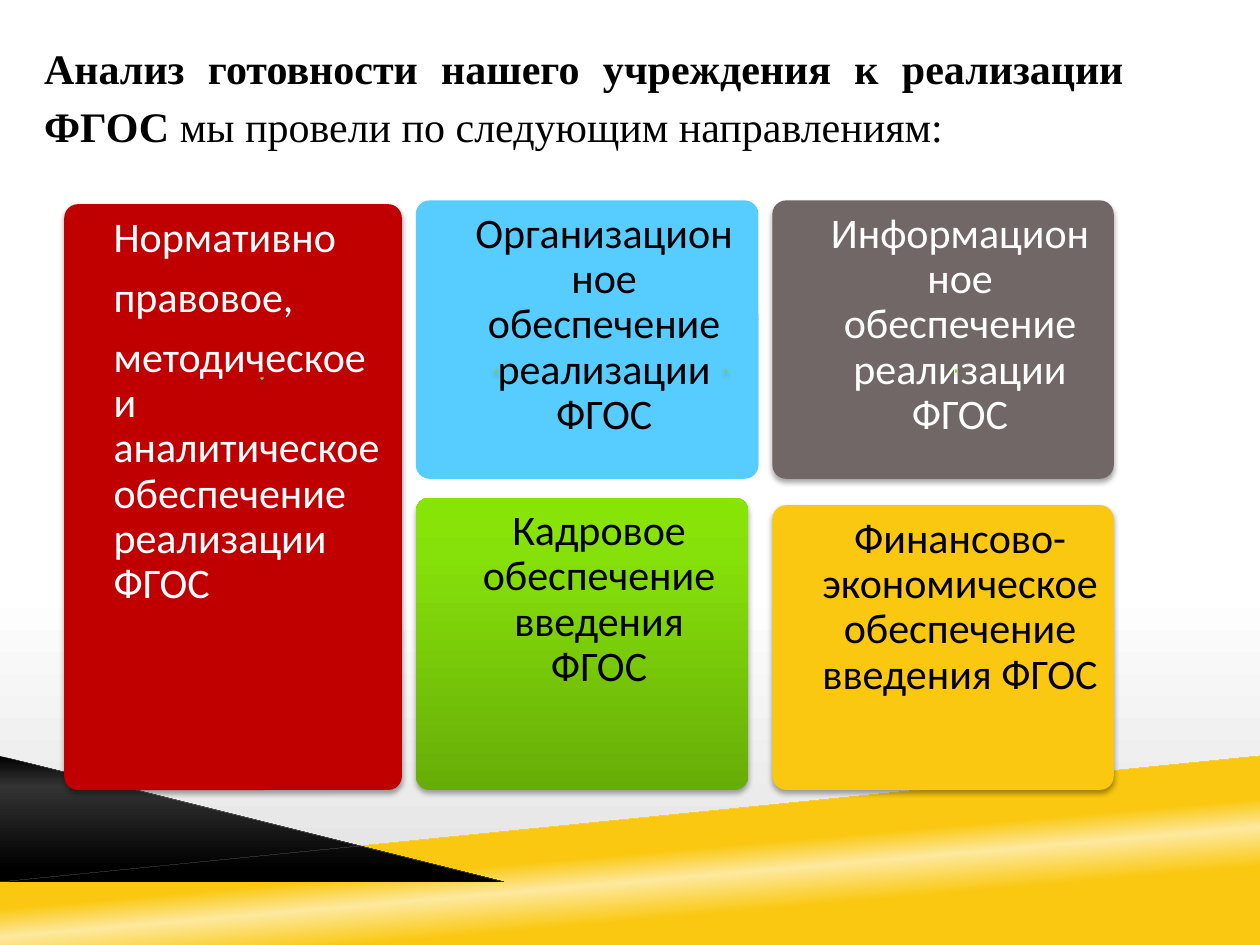
import lxml.etree
import pptx
import pptx.dml.color
import pptx.enum.shapes
import pptx.enum.text
import pptx.oxml.ns
import pptx.util

Inches = pptx.util.Inches
Pt = pptx.util.Pt
ALIGN = pptx.enum.text.PP_ALIGN
SHAPE = pptx.enum.shapes.MSO_SHAPE
qn = pptx.oxml.ns.qn

COLORS = {
    "white": "FFFFFF",
    "black": "000000",
    "mist": "E6E6E6",
    "charcoal": "333333",
    "yellow": "FAC810",
    "pale_yellow": "FDE99F",
    "red": "C00000",
    "blue": "57CDFF",
    "gray": "716767",
    "dark_green": "67AD08",
    "green": "86E00A",
    "bright_green": "87E506",
    "marker": "84CE1F",
}
GRADIENTS = {
    "background": (270, [(0, "white"), (62, "white"), (90, "mist"), (100, "white")]),
    "band": (95, [(39, "yellow"), (50, "pale_yellow"), (58, "yellow")]),
    "wedge": (270, [(0, "black"), (24, "charcoal"), (90, "black")]),
    "green_card": (90, [(0, "dark_green"), (80, "green"), (100, "bright_green")]),
}
CORNER = 0.11

CARDS = [
    ((0.51, 1.62, 2.68, 4.65), "red", "white", ALIGN.LEFT, True,
     ["Нормативно", "правовое,",
      "методическое и аналитическое обеспечение реализации ФГОС"]),
    ((3.3, 1.59, 2.72, 2.21), "blue", "black", ALIGN.CENTER, False,
     ["Организационное обеспечение реализации ФГОС"]),
    ((3.3, 3.95, 2.64, 2.32), "green_card", "black", ALIGN.CENTER, True,
     ["Кадровое обеспечение введения ФГОС"]),
    ((6.13, 4.01, 2.71, 2.26), "yellow", "black", ALIGN.CENTER, True,
     ["Финансово-экономическое обеспечение введения ФГОС"]),
    ((6.13, 1.59, 2.71, 2.21), "gray", "white", ALIGN.CENTER, True,
     ["Информационное обеспечение реализации ФГОС"]),
]
MARKERS = [(2.07, 3, 176), (3.93, 2.94, 90), (5.75, 2.94, 90), (7.58, 2.94, 90)]


def rgb(name):
    """Return the named colour."""
    return pptx.dml.color.RGBColor.from_string(COLORS[name])


def paint(fill, element, name):
    """Fill with a named gradient or a solid colour."""
    if name not in GRADIENTS:
        fill.solid()
        fill.fore_color.rgb = rgb(name)
        return
    angle, stops = GRADIENTS[name]
    fill.gradient()
    fill.gradient_angle = angle
    stop_list = next(element.iter(qn("a:gsLst")))
    for stop in list(stop_list):
        stop_list.remove(stop)
    for position, color in stops:
        stop = lxml.etree.SubElement(stop_list, qn("a:gs"), pos=str(position * 1000))
        lxml.etree.SubElement(stop, qn("a:srgbClr"), val=COLORS[color])


def add_shadow(shape):
    """Give the shape a soft shadow below it."""
    effects = next(shape.element.iter(qn("a:effectLst")))
    shadow = lxml.etree.SubElement(
        effects, qn("a:outerShdw"), blurRad=str(Pt(3.1)), dist=str(Pt(1.8)),
        dir="5400000", rotWithShape="0")
    color = lxml.etree.SubElement(shadow, qn("a:srgbClr"), val=COLORS["black"])
    lxml.etree.SubElement(color, qn("a:alpha"), val="35000")


def add_polygon(slide, points, color):
    """Draw a borderless polygon through points given in inches."""
    builder = slide.shapes.build_freeform(*points[0], scale=Inches(1))
    builder.add_line_segments(points[1:], close=True)
    shape = builder.convert_to_shape()
    paint(shape.fill, shape.element, color)
    shape.line.fill.background()
    shape.shadow.inherit = False


def add_decoration(slide, width, bottom):
    """Draw the wedge and the rising band at the foot of the slide."""
    band_left, band_right = bottom - 0.29, bottom - 1.23
    stripe = 0.04
    add_polygon(slide, [(0, band_left), (width, band_right),
                        (width, bottom), (0, bottom)], "band")
    add_polygon(slide, [(0, bottom - 1.61), (3.59, bottom - 0.65),
                        (0, band_left)], "wedge")
    add_polygon(slide, [(width, band_right - stripe), (0, band_left - stripe),
                        (0, band_left + stripe), (width, band_right + stripe)], "white")
    add_polygon(slide, [(0, bottom - 1.65), (0, bottom - 1.57),
                        (3.5, bottom - 0.62), (3.75, bottom - 0.64)], "white")


def add_heading(slide, left, top, width, height):
    """Place the justified heading in the title placeholder."""
    title = slide.shapes.title
    title.left, title.top = Inches(left), Inches(top)
    title.width, title.height = Inches(width), Inches(height)
    frame = title.text_frame
    frame.word_wrap = True
    frame.auto_size = pptx.enum.text.MSO_AUTO_SIZE.NONE
    frame.vertical_anchor = pptx.enum.text.MSO_ANCHOR.TOP
    frame.margin_left = Inches(0.35)
    paragraph = frame.paragraphs[0]
    paragraph.alignment = ALIGN.JUSTIFY
    paragraph.line_spacing = 1.15
    parts = [("Анализ готовности нашего учреждения к реализации ФГОС ", True),
             ("мы провели по следующим направлениям:", False)]
    for text, bold in parts:
        run = paragraph.add_run()
        run.text = text
        run.font.name = "Times New Roman"
        run.font.size = Pt(24)
        run.font.bold = bold
        run.font.color.rgb = rgb("black")


def add_card(slide, box, color, text_color, alignment, shadowed, lines):
    """Draw one rounded card with its text."""
    card = slide.shapes.add_shape(SHAPE.ROUNDED_RECTANGLE, *map(Inches, box))
    card.adjustments[0] = CORNER / min(box[2:])
    paint(card.fill, card.element, color)
    card.line.fill.background()
    card.shadow.inherit = False
    if shadowed:
        add_shadow(card)
    frame = card.text_frame
    frame.word_wrap = True
    frame.vertical_anchor = pptx.enum.text.MSO_ANCHOR.TOP
    frame.margin_left, frame.margin_right = Inches(0.36), Inches(0.09)
    frame.margin_top = frame.margin_bottom = Inches(0.06)
    frame.text = "\n".join(lines)
    for paragraph in frame.paragraphs:
        paragraph.alignment = alignment
        paragraph.line_spacing = 0.9
        paragraph.space_after = Pt(8.4)
        font = paragraph.runs[0].font
        font.name = "Calibri"
        font.size = Pt(24)
        font.color.rgb = rgb(text_color)


def add_marker(slide, left, top, rotation):
    """Draw one tiny triangular marker."""
    marker = slide.shapes.add_shape(
        SHAPE.FLOWCHART_EXTRACT, Inches(left), Inches(top), Inches(0.02), Inches(0.01))
    marker.rotation = rotation
    paint(marker.fill, marker.element, "white")
    marker.line.color.rgb = rgb("marker")
    marker.line.width = Pt(0.75)
    marker.shadow.inherit = False
    add_shadow(marker)


def main():
    """Build and save the presentation."""
    presentation = pptx.Presentation()
    presentation.slide_width, presentation.slide_height = Inches(10), Inches(7.5)
    slide = presentation.slides.add_slide(presentation.slide_layouts[5])
    paint(slide.background.fill, slide.element, "background")
    add_decoration(slide, 10, 7.5)
    add_heading(slide, 0, 0.23, 9.02, 1.2)
    for card in CARDS:
        add_card(slide, *card)
    for marker in MARKERS:
        add_marker(slide, *marker)
    presentation.save("out.pptx")


if __name__ == "__main__":
    main()
